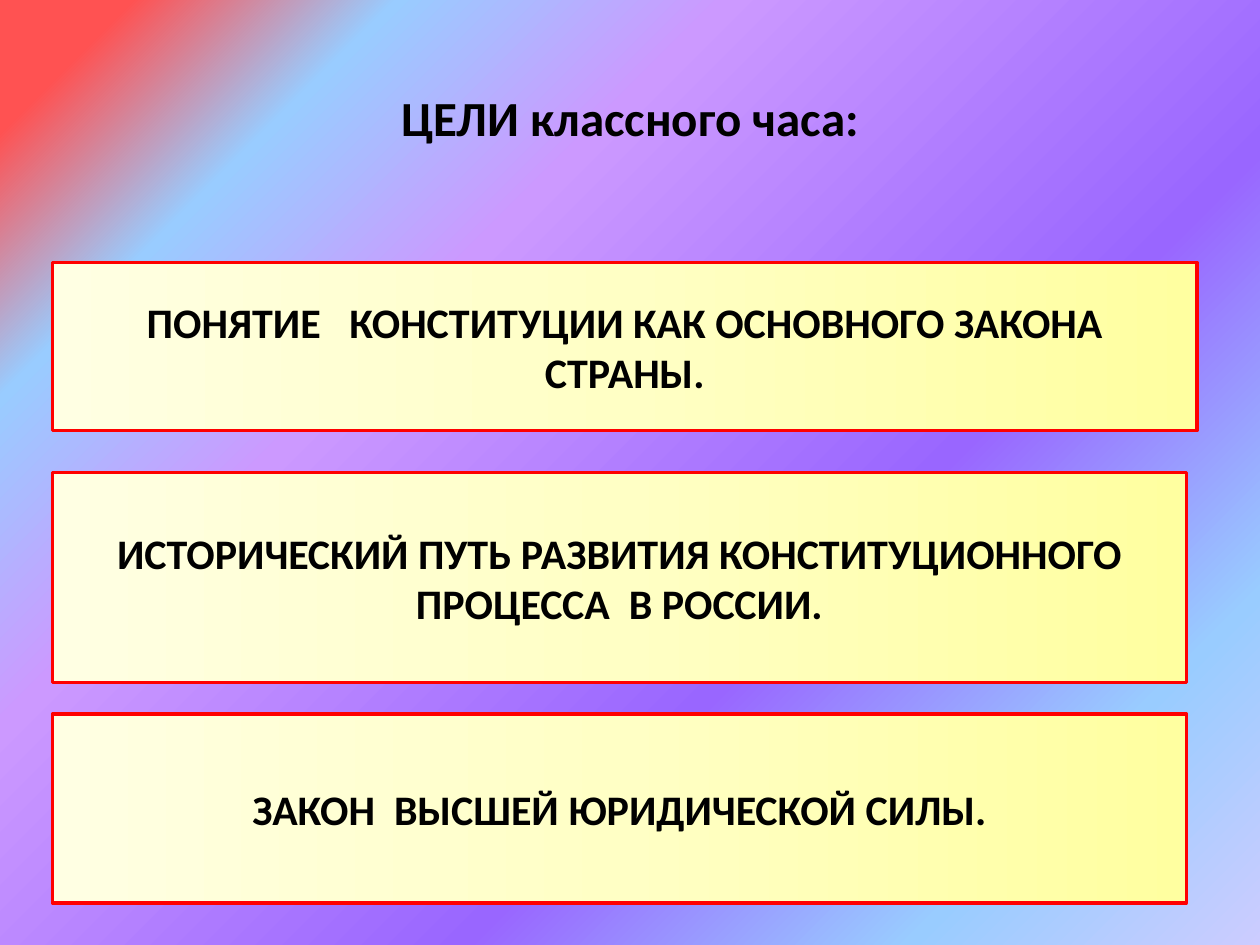
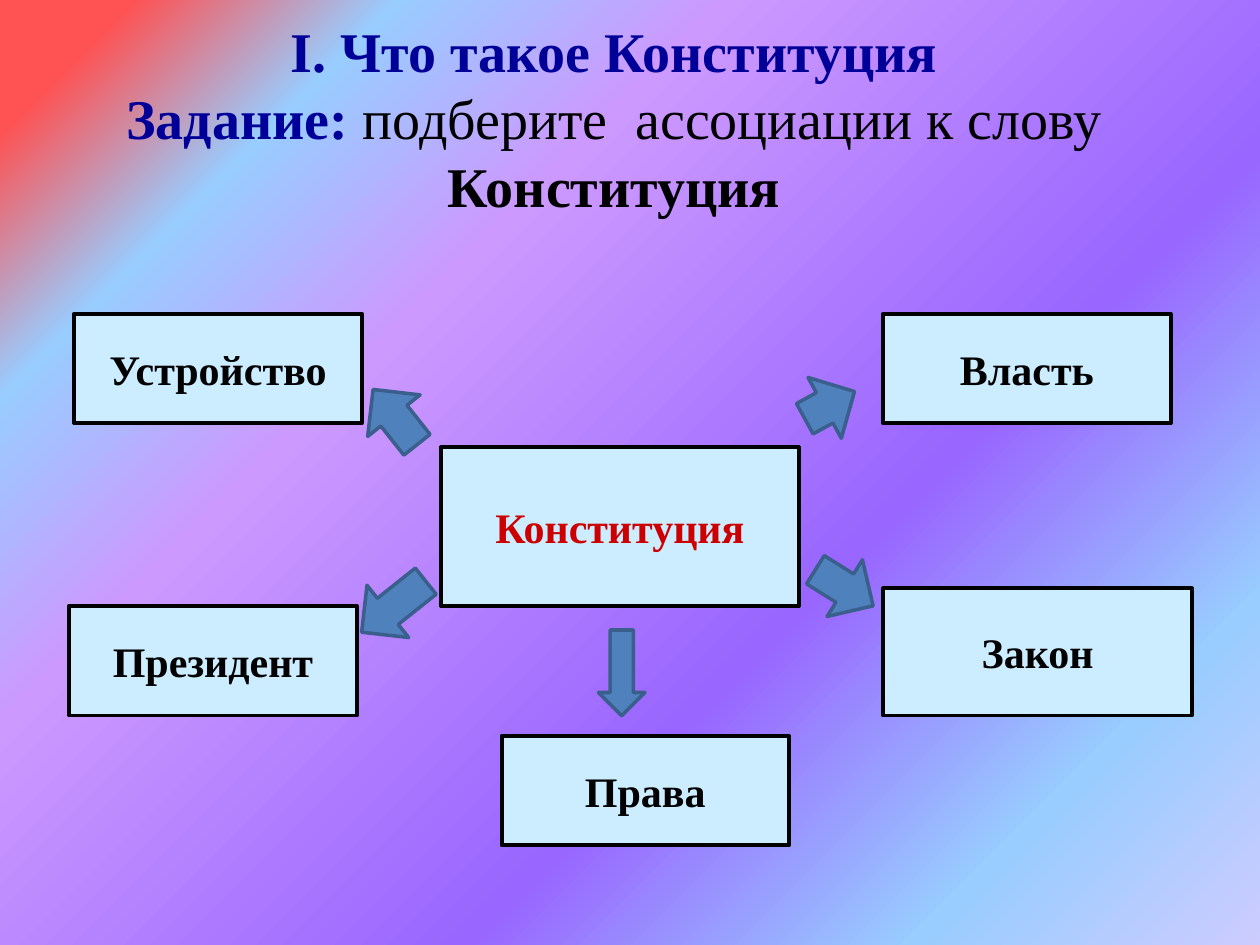
from lxml import etree
from pptx import Presentation
from pptx.dml.color import RGBColor
from pptx.enum import shapes, text
from pptx.oxml import ns
from pptx.util import Pt

BLACK = RGBColor(0x00, 0x00, 0x00)
RED = RGBColor(0xFF, 0x00, 0x00)
DARK_RED = RGBColor(0xCC, 0x00, 0x00)
NAVY = RGBColor(0x00, 0x00, 0x99)
PALE_BLUE = RGBColor(0xCC, 0xEC, 0xFF)
ARROW_BLUE = RGBColor(0x4F, 0x81, 0xBD)
ARROW_EDGE = RGBColor(0x3A, 0x5F, 0x8C)
BACKGROUND_STOPS = [
    (0, RGBColor(0xCC, 0xCC, 0xFF)), (16, RGBColor(0x99, 0xCC, 0xFF)),
    (36, RGBColor(0x99, 0x66, 0xFF)), (67, RGBColor(0xCC, 0x99, 0xFF)),
    (82, RGBColor(0x99, 0xCC, 0xFF)), (94, RGBColor(0xFF, 0x52, 0x52)),
]
GOAL_STOPS = [
    (0, RGBColor(0xFF, 0xFF, 0xA0)), (50, RGBColor(0xFF, 0xFF, 0xC5)),
    (100, RGBColor(0xFF, 0xFF, 0xE3)),
]
CALIBRI = {"name": "Calibri", "bold": True}
TIMES = {"name": "Times New Roman", "bold": True}
RECT = shapes.MSO_SHAPE.RECTANGLE
DOWN = shapes.MSO_SHAPE.DOWN_ARROW
RIGHT = shapes.MSO_SHAPE.RIGHT_ARROW
XMLNS = ns.nsdecls("a")


def set_gradient(owner, fill, stops, direction):
    """Fill owner with stops (percent, colour); direction is a:lin or a:path XML."""
    fill.gradient()
    grad = owner.element.find(".//" + ns.qn("a:gradFill"))
    for child in list(grad):
        grad.remove(child)
    stop_list = etree.SubElement(grad, ns.qn("a:gsLst"))
    for percent, color in stops:
        stop = etree.SubElement(stop_list, ns.qn("a:gs"), pos=str(percent * 1000))
        etree.SubElement(stop, ns.qn("a:srgbClr"), val=str(color))
    grad.append(etree.fromstring(direction))


def add_run(p, words, color, size, font):
    r = p.add_run()
    r.text = words
    for key, value in {**font, "size": Pt(size)}.items():
        setattr(r.font, key, value)
    r.font.color.rgb = color


prs = Presentation()
prs.slide_width, prs.slide_height = Pt(720), Pt(540)

# Shared background and title size
master = prs.slide_master
set_gradient(master, master.background.fill, BACKGROUND_STOPS,
             f'<a:path {XMLNS} path="circle"><a:fillToRect l="100000" t="100000"/></a:path>')
title_style = master.element.find(".//" + ns.qn("p:titleStyle"))
title_style.find(".//" + ns.qn("a:defRPr")).set("sz", "3200")

# Both slides with their titles; None is a line break
titles = [
    ((36, 21.6, 648, 90), text.MSO_AUTO_SIZE.NONE, 28, CALIBRI,
     [("ЦЕЛИ классного часа:", BLACK, True)]),
    ((18, 5, 666, 162.7), text.MSO_AUTO_SIZE.SHAPE_TO_FIT_TEXT, 32, TIMES,
     [("I. Что такое Конституция", NAVY, True), None,
      ("Задание: ", NAVY, True),
      ("подберите  ассоциации к слову ", BLACK, False),
      ("Конституция", BLACK, True), None]),
]
for box, auto_size, size, font, parts in titles:
    s = prs.slides.add_slide(prs.slide_layouts[5])
    title = s.shapes.title
    title.left, title.top, title.width, title.height = map(Pt, box)
    tf = title.text_frame
    tf.word_wrap = True
    tf.auto_size = auto_size
    tf.vertical_anchor = text.MSO_ANCHOR.MIDDLE
    p = tf.paragraphs[0]
    p.alignment = text.PP_ALIGN.CENTER
    for part in parts:
        if part is None:
            p.add_line_break()
        else:
            words, color, bold = part
            add_run(p, words, color, size, {**font, "bold": bold})
goals_slide, map_slide = prs.slides

# Text boxes: position and words
goals = [
    ((30, 150, 654, 96), "ПОНЯТИЕ   КОНСТИТУЦИИ КАК ОСНОВНОГО ЗАКОНА СТРАНЫ."),
    ((30, 270, 648, 120), "ИСТОРИЧЕСКИЙ ПУТЬ РАЗВИТИЯ КОНСТИТУЦИОННОГО ПРОЦЕССА  В РОССИИ."),
    ((30, 408, 648, 108), "ЗАКОН  ВЫСШЕЙ ЮРИДИЧЕСКОЙ СИЛЫ."),
]
associations = [
    ((252, 255.6, 204.5, 90.7), "Конституция"),
    ((42.5, 179.3, 164.2, 62.6), "Устройство"),
    ((39.6, 346.3, 164.2, 62.6), "Президент"),
    ((504.7, 179.3, 164.2, 62.6), "Власть"),
    ((504.7, 336.2, 176.4, 72.7), "Закон"),
    ((286.6, 420.5, 164.2, 62.6), "Права"),
]
for s, boxes, font in ((goals_slide, goals, CALIBRI), (map_slide, associations, TIMES)):
    for box, words in boxes:
        sp = s.shapes.add_shape(RECT, *map(Pt, box))
        sp.shadow.inherit = False
        if boxes is goals:
            set_gradient(sp, sp.fill, GOAL_STOPS, f'<a:lin {XMLNS} ang="10800000" scaled="0"/>')
            sp.line.color.rgb, sp.line.width = RED, Pt(2)
        else:
            sp.fill.solid()
            sp.fill.fore_color.rgb = PALE_BLUE
            sp.line.color.rgb, sp.line.width = BLACK, Pt(2.25)
        tf = sp.text_frame
        tf.word_wrap = boxes is goals
        tf.vertical_anchor = text.MSO_ANCHOR.MIDDLE
        p = tf.paragraphs[0]
        p.alignment = text.PP_ALIGN.CENTER
        add_run(p, words, DARK_RED if words == "Конституция" else BLACK, 24, font)

# Arrows from the centre: preset, position, rotation, head length
arrows = [
    (DOWN, (342, 360, 26.6, 49), 0, 0.5),
    (RIGHT, (457.9, 211.7, 32.4, 39.6), 331.3, 0.6),
    (RIGHT, (463, 316.8, 38.9, 38.2), 32, 0.5),
    (DOWN, (206.6, 218.2, 38.2, 40.3), 141.6, 0.5),
    (DOWN, (205.9, 323.3, 38.2, 46.8), 51.4, 0.5),
]
for preset, box, rotation, head in arrows:
    sp = map_slide.shapes.add_shape(preset, *map(Pt, box))
    sp.shadow.inherit = False
    sp.rotation = rotation
    sp.adjustments[1] = head
    sp.fill.solid()
    sp.fill.fore_color.rgb = ARROW_BLUE
    sp.line.color.rgb, sp.line.width = ARROW_EDGE, Pt(2)

prs.save("out.pptx")
